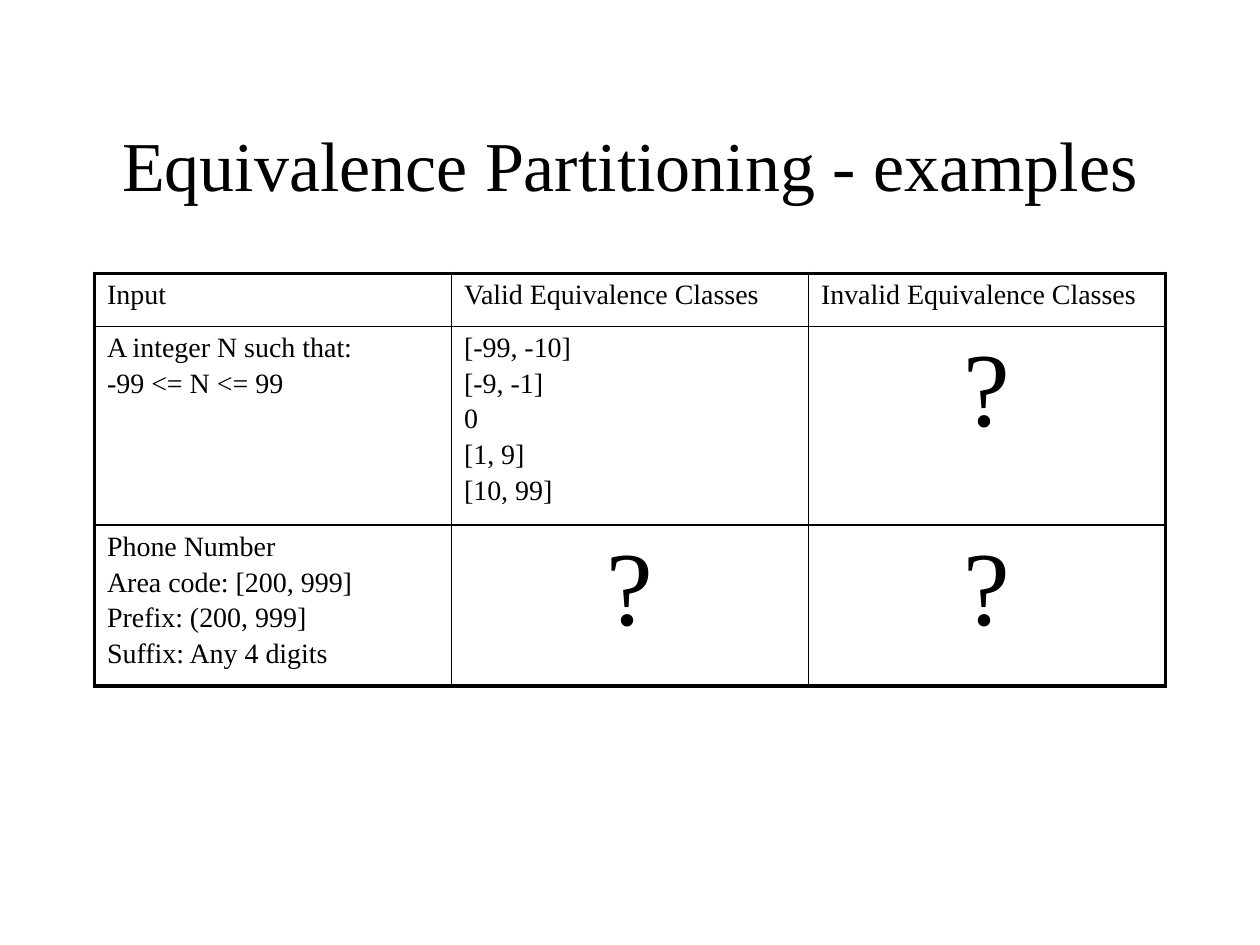
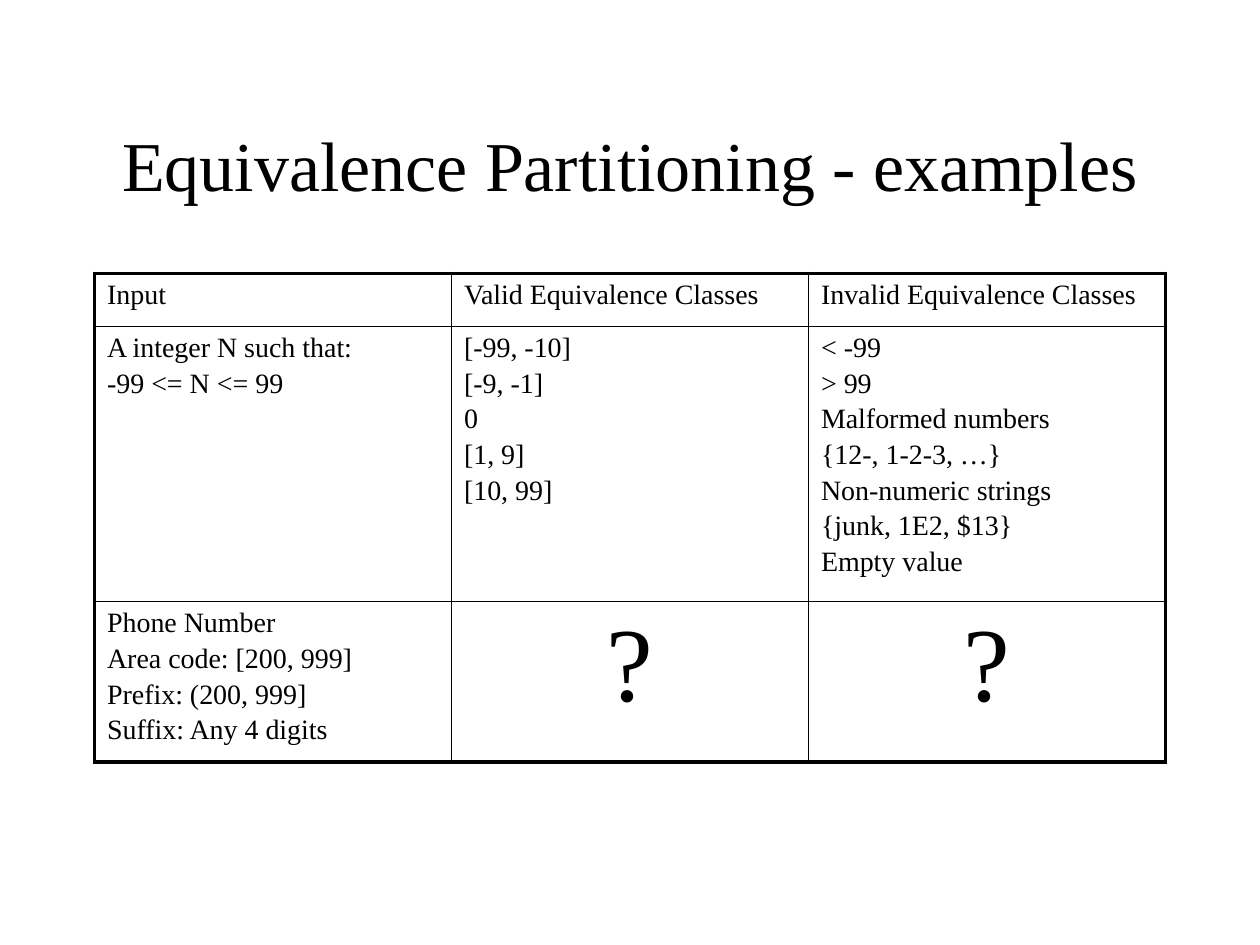
"""Build two slides of equivalence partitioning examples."""
from lxml import etree
from pptx import Presentation
from pptx.dml.color import RGBColor
from pptx.enum.text import MSO_ANCHOR as ANCHOR, PP_ALIGN as ALIGN
from pptx.oxml.ns import qn
from pptx.util import Inches, Pt

FONT = "Times New Roman"
BLACK = "000000"
TITLE = "Equivalence Partitioning - examples"
HEADER = ["Input", "Valid Equivalence Classes", "Invalid Equivalence Classes"]
INTEGER = ["A integer N such that:\n-99 <= N <= 99",
           "[-99, -10]\n[-9, -1]\n0\n[1, 9]\n[10, 99]"]
INVALID = ("< -99\n> 99\nMalformed numbers\n{12-, 1-2-3, …}\n"
           "Non-numeric strings\n{junk, 1E2, $13}\nEmpty value")
PHONE = ["Phone Number\nArea code: [200, 999]\nPrefix: (200, 999]\nSuffix: Any 4 digits",
         "?", "?"]
SLIDES = [
    ([HEADER, INTEGER + ["?"], PHONE], [0.42, 1.52, 1.27]),
    ([HEADER, INTEGER + [INVALID], PHONE], [0.42, 2.1, 1.22]),
]


def style_text(tf, size, align):
    for i, p in enumerate(tf.paragraphs):
        p.alignment = align
        if i:
            p.space_before = Pt(2.6)
        for r in p.runs:
            r.font.name = FONT
            r.font.size = Pt(size)
            r.font.color.rgb = RGBColor.from_string(BLACK)


def add_border(cell, side, width):
    tcPr = cell._tc.get_or_add_tcPr()
    ln = etree.SubElement(tcPr, qn(f"a:ln{side}"), w=str(Pt(width)))
    fill = etree.SubElement(ln, qn("a:solidFill"))
    etree.SubElement(fill, qn("a:srgbClr"), val=BLACK)


prs = Presentation()
prs.slide_width, prs.slide_height = Inches(10), Inches(7.5)

for rows, heights in SLIDES:
    s = prs.slides.add_slide(prs.slide_layouts[6])
    tf = s.shapes.add_textbox(Inches(0.75), Inches(0.67), Inches(8.5), Inches(1.25)).text_frame
    tf.word_wrap = True
    tf.vertical_anchor = ANCHOR.MIDDLE
    tf.text = TITLE
    style_text(tf, 40, ALIGN.CENTER)

    n_rows, n_cols = len(rows), len(HEADER)
    table = s.shapes.add_table(n_rows, n_cols, Inches(0.75), Inches(2.17),
                               Inches(8.5), Inches(sum(heights))).table
    table.first_row = table.horz_banding = False
    for col in table.columns:
        col.width = Inches(8.5 / n_cols)
    for i, row in enumerate(rows):
        table.rows[i].height = Inches(heights[i])
        for j, text in enumerate(row):
            cell = table.cell(i, j)
            cell.text_frame.text = text
            if text == "?":
                style_text(cell.text_frame, 60, ALIGN.CENTER)
            else:
                style_text(cell.text_frame, 16, ALIGN.LEFT)
            outer = {"L": j == 0, "R": j == n_cols - 1, "T": i == 0, "B": i == n_rows - 1}
            for side, is_outer in outer.items():
                add_border(cell, side, 2.25 if is_outer else 1)
            cell.fill.background()

prs.save("out.pptx")
